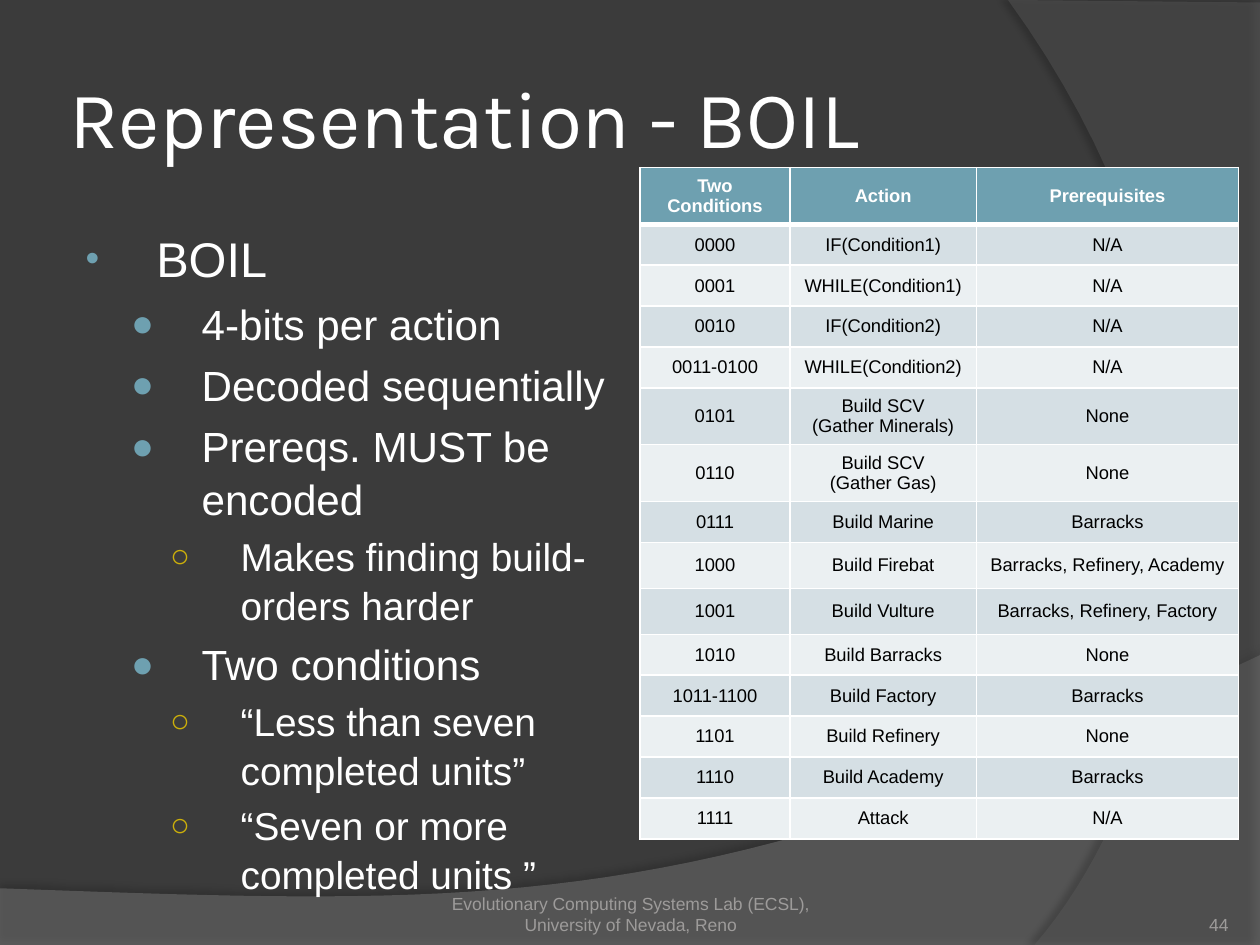
from lxml import etree
from pptx import Presentation, util as u
from pptx.dml.color import RGBColor
from pptx.enum import text
from pptx.oxml import ns, parse_xml

C = {"bg": "3B3B3B", "wave": "7F7F7F", "arc": "5E5E5E", "white": "FFFFFF",
     "black": "000000", "teal": "6EA0B0", "gold": "CCAF0A", "footer": "9D9B9A",
     "odd": "D5DFE4", "even": "EBF0F2"}
NS = ns.nsdecls("a")

prs = Presentation()
prs.slide_width, prs.slide_height = u.Inches(10), u.Inches(7.5)
col, row = prs.slide_width / 100, prs.slide_height / 100
s = prs.slides.add_slide(prs.slide_layouts[1])
s.background.fill.solid()
s.background.fill.fore_color.rgb = RGBColor.from_string(C["bg"])


def place(sp, x, y, w, h):
    sp.left, sp.top = round(x * col), round(y * row)
    sp.width, sp.height = round(w * col), round(h * row)


def style(p, size, color, font="Arial", bold=False):
    for r in p.runs:
        r.font.size, r.font.name, r.font.bold = u.Pt(size), font, bold
        r.font.color.rgb = RGBColor.from_string(C[color])


swooshes = [
    ("wave", 45, 35, 3.5, 270, [(0, 94), (0, 100), (100, 100), (100, 69.33)],
     [(55.9, 97.2), (39.1, 95.87), (0, 94)]),
    ("arc", 40, 45, 4, 180, [(100, 0.27), (100, 100), (82.1, 100)],
     [(93.5, 82.53), (101.8, 40), (80, 0)]),
]
for i, (color, opacity, shade, dist, angle, corners, curve) in enumerate(swooshes):
    knots = [corners[-1]] + curve
    pts = list(corners)
    for t in (n / 40 for n in range(1, 41)):
        weights = ((1 - t) ** 3, 3 * t * (1 - t) ** 2, 3 * t * t * (1 - t), t ** 3)
        pts.append(tuple(sum(w * k[axis] for w, k in zip(weights, knots)) for axis in (0, 1)))
    pts = [(round(x * col), round(y * row)) for x, y in pts]
    builder = s.shapes.build_freeform(*pts[0])
    builder.add_line_segments(pts[1:], close=True)
    sp = builder.convert_to_shape()
    sp.line.fill.background()
    sp.fill.solid()
    sp.fill.fore_color.rgb = RGBColor.from_string(C[color])
    clr = sp.element.spPr.find(".//" + ns.qn("a:srgbClr"))
    etree.SubElement(clr, ns.qn("a:alpha"), val=str(opacity * 1000))
    sp.element.spPr.append(parse_xml(
        f'<a:effectLst {NS}><a:outerShdw blurRad="{u.Pt(4)}" dist="{u.Pt(dist)}" '
        f'dir="{angle * 60000}" algn="tl" rotWithShape="0"><a:srgbClr val="{C["black"]}">'
        f'<a:alpha val="{shade * 1000}"/></a:srgbClr></a:outerShdw></a:effectLst>'))
    s.shapes._spTree.insert(2 + i, sp.element)

title, body = s.placeholders
place(title, 5, 4, 81.7, 16.67)
tf = title.text_frame
tf.text = "Representation - BOIL"
tf.auto_size = text.MSO_AUTO_SIZE.NONE
tf.vertical_anchor = text.MSO_ANCHOR.MIDDLE
tf.margin_left = tf.margin_right = u.Inches(0.05)
tf.paragraphs[0].alignment = text.PP_ALIGN.LEFT
style(tf.paragraphs[0], 46, "white", "Karla")

levels = [(27.8, 0.64, "•", "teal", 80), (24.1, 1, "●", "teal", 90), (22.2, 1.31, "○", "gold", 85)]
points = [
    (0, "BOIL"),
    (1, "4-bits per action"),
    (1, "Decoded sequentially"),
    (1, "Prereqs. MUST be encoded"),
    (2, "Makes finding build-orders harder"),
    (1, "Two conditions"),
    (2, "“Less than seven completed units”"),
    (2, "“Seven or more completed units ”"),
]
place(body, 5, 23.33, 49.2, 66.67)
tf = body.text_frame
tf.text = "\n".join(line for _, line in points)
tf.auto_size = text.MSO_AUTO_SIZE.NONE
for i, (p, (level, _)) in enumerate(zip(tf.paragraphs, points)):
    size, margin, mark, color, scale = levels[level]
    p.level, p.line_spacing = level, 1.04
    p.space_before = u.Pt(round(size * 0.2) if i else 0)
    pPr = p._p.get_or_add_pPr()
    pPr.set("marL", str(u.Inches(margin)))
    pPr.set("indent", str(u.Inches(-0.56)))
    for xml in (f'<a:buClr {NS}><a:srgbClr val="{C[color]}"/></a:buClr>',
                f'<a:buSzPct {NS} val="{scale * 1000}"/>',
                f'<a:buFont {NS} typeface="Arial"/>',
                f'<a:buChar {NS} char="{mark}"/>'):
        pPr.append(parse_xml(xml))
    style(p, size, "white")

footers = [
    ("Evolutionary Computing Systems Lab (ECSL), University of Nevada, Reno",
     34.2, 31.7, text.PP_ALIGN.CENTER),
    ("44", 89.2, 8.3, text.PP_ALIGN.RIGHT),
]
for line, x, w, align in footers:
    sp = s.shapes.add_textbox(0, 0, 0, 0)
    place(sp, x, 93.6, w, 5.33)
    tf = sp.text_frame
    tf.text = line
    tf.word_wrap = True
    tf.vertical_anchor = text.MSO_ANCHOR.BOTTOM
    tf.margin_left = tf.margin_top = tf.margin_right = tf.margin_bottom = 0
    tf.paragraphs[0].alignment = align
    style(tf.paragraphs[0], 10, "footer")

actions = [
    ("Two Conditions", "Action", "Prerequisites"),
    ("0000", "IF(Condition1)", "N/A"),
    ("0001", "WHILE(Condition1)", "N/A"),
    ("0010", "IF(Condition2)", "N/A"),
    ("0011-0100", "WHILE(Condition2)", "N/A"),
    ("0101", "Build SCV\n(Gather Minerals)", "None"),
    ("0110", "Build SCV\n(Gather Gas)", "None"),
    ("0111", "Build Marine", "Barracks"),
    ("1000", "Build Firebat", "Barracks, Refinery, Academy"),
    ("1001", "Build Vulture", "Barracks, Refinery, Factory"),
    ("1010", "Build Barracks", "None"),
    ("1011-1100", "Build Factory", "Barracks"),
    ("1101", "Build Refinery", "None"),
    ("1110", "Build Academy", "Barracks"),
    ("1111", "Attack", "N/A"),
]
heights = {0: 30.4, 5: 30.4, 6: 30.4, 8: 26.3, 9: 26.3}
frame = s.shapes.add_table(len(actions), 3, 0, 0, 0, 0)
place(frame, 50.8, 17.73, 47.5, 70)
table = frame.table
for column, w in zip(table.columns, (11.9, 14.8, 20.8)):
    column.width = round(w * col)
for i, values in enumerate(actions):
    table.rows[i].height = u.Pt(heights.get(i, 23.4))
    for j, value in enumerate(values):
        cell = table.cell(i, j)
        cell.text = value
        cell.vertical_anchor = text.MSO_ANCHOR.MIDDLE
        for p in cell.text_frame.paragraphs:
            p.alignment = text.PP_ALIGN.CENTER
            style(p, 10.5, "black" if i else "white", bold=i == 0)
        tcPr = cell._tc.get_or_add_tcPr()
        for side in "LRTB":
            thick = (i, side) in ((0, "B"), (1, "T"))
            tcPr.append(parse_xml(
                f'<a:ln{side} {NS} w="{u.Pt(3 if thick else 1)}"><a:solidFill>'
                f'<a:srgbClr val="{C["white"]}"/></a:solidFill></a:ln{side}>'))
        cell.fill.solid()
        fill = "teal" if i == 0 else "odd" if i % 2 else "even"
        cell.fill.fore_color.rgb = RGBColor.from_string(C[fill])

prs.save("out.pptx")
